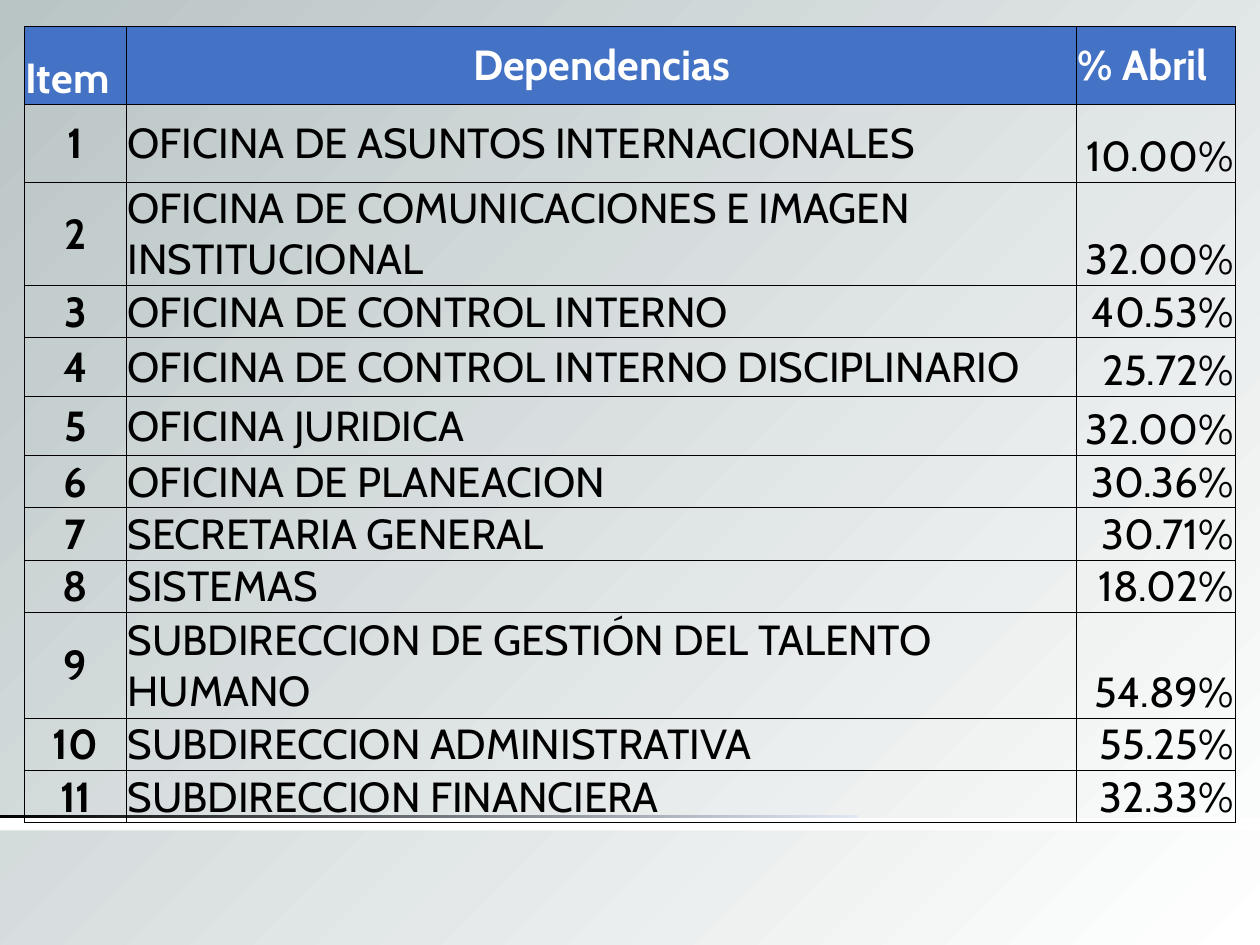
from lxml import etree
from pptx import Presentation
from pptx.dml.color import RGBColor
from pptx.enum.shapes import MSO_SHAPE
from pptx.enum.text import MSO_ANCHOR, PP_ALIGN
from pptx.oxml import parse_xml
from pptx.oxml.ns import nsdecls, qn
from pptx.util import Pt

LEFT, MID, RIGHT = PP_ALIGN.LEFT, PP_ALIGN.CENTER, PP_ALIGN.RIGHT
CENTER, LOW = MSO_ANCHOR.MIDDLE, MSO_ANCHOR.BOTTOM
RECT = MSO_SHAPE.RECTANGLE

HUES = {"head": "4472C4", "ink": "000000", "light": "FFFFFF",
        "mist": "B9C4C5", "pale": "E1E8F5"}
FONT, SIZE = "Cabin", 24

HEAD = ("Item", "Dependencias", "% Abril")
# office, share, row height
ROWS = [
    ("OFICINA DE ASUNTOS INTERNACIONALES", "10.00%", 44.5),
    ("OFICINA DE COMUNICACIONES E IMAGEN INSTITUCIONAL", "32.00%", 58.5),
    ("OFICINA DE CONTROL INTERNO", "40.53%", 29.5),
    ("OFICINA DE CONTROL INTERNO DISCIPLINARIO", "25.72%", 33.7),
    ("OFICINA JURIDICA", "32.00%", 33.7),
    ("OFICINA DE PLANEACION", "30.36%", 29.5),
    ("SECRETARIA GENERAL", "30.71%", 29.5),
    ("SISTEMAS", "18.02%", 29.5),
    ("SUBDIRECCION DE GESTIÓN DEL TALENTO HUMANO", "54.89%", 60.5),
    ("SUBDIRECCION ADMINISTRATIVA", "55.25%", 29.5),
    ("SUBDIRECCION FINANCIERA", "32.33%", 29.5),
]
HEIGHTS = [44.5] + [high for _, _, high in ROWS]
WIDTHS = (58.3, 542.8, 90.7)
# align, anchor, bold for each column
HEAD_LOOK = ((LEFT, LOW, True), (MID, CENTER, True), (LEFT, CENTER, True))
BODY_LOOK = ((MID, CENTER, True), (LEFT, CENTER, False), (RIGHT, LOW, False))


def tint(hue):
    return RGBColor.from_string(HUES[hue])


def blend(fill, first, last):
    fill.gradient()
    for stop, place, hue in zip(fill.gradient_stops, (0, 1), (first, last)):
        stop.position = place
        stop.color.rgb = tint(hue)


def add_bar(slide, top, wide, high):
    bar = slide.shapes.add_shape(RECT, 0, Pt(top), Pt(wide), Pt(high))
    bar.shadow.inherit = False
    bar.line.fill.background()
    return bar


def write(cell, text, align=LEFT, anchor=CENTER, bold=False, hue="ink"):
    cell.margin_left = cell.margin_right = cell.margin_top = Pt(0.7)
    cell.margin_bottom = 0
    cell.vertical_anchor = anchor
    para = cell.text_frame.paragraphs[0]
    para.alignment = align
    run = para.add_run()
    run.text = text
    font = run.font
    font.name, font.size, font.bold = FONT, Pt(SIZE), bold
    font.color.rgb = tint(hue)


def edge(cell):
    """Draw thin lines on all four sides; they must precede the cell fill."""
    props = cell._tc.get_or_add_tcPr()
    for spot, side in enumerate("LRTB"):
        props.insert(spot, parse_xml(
            f'<a:ln{side} {nsdecls("a")} w="{Pt(0.5)}"><a:solidFill>'
            f'<a:srgbClr val="{HUES["ink"]}"/></a:solidFill></a:ln{side}>'))


deck = Presentation()
deck.slide_width, deck.slide_height = Pt(720), Pt(540)
slide = deck.slides.add_slide(deck.slide_layouts[6])

# Backdrop: round gradient centred on the bottom right corner
back = slide.background.fill
blend(back, "light", "mist")
grad = slide._element.find(".//" + qn("a:gradFill"))
grad.remove(grad.find(qn("a:lin")))
ring = etree.SubElement(grad, qn("a:path"), path="circle")
etree.SubElement(ring, qn("a:fillToRect"), l="100000", t="100000")

rule = add_bar(slide, 466, 490.5, 3.5)
blend(rule.fill, "ink", "pale")
rule.fill.gradient_angle = 0
band = add_bar(slide, 467.5, 720, 7)
band.fill.solid()
band.fill.fore_color.rgb = tint("light")

lines = [HEAD] + [(str(num), name, share)
                  for num, (name, share, _) in enumerate(ROWS, 1)]
table = slide.shapes.add_table(len(lines), len(WIDTHS), Pt(14), Pt(15),
                               Pt(sum(WIDTHS)), Pt(sum(HEIGHTS))).table
table.first_row = table.horz_banding = False
for col, wide in zip(table.columns, WIDTHS):
    col.width = Pt(wide)
for row, high in zip(table.rows, HEIGHTS):
    row.height = Pt(high)

for r, line in enumerate(lines):
    looks = BODY_LOOK if r else HEAD_LOOK
    for c, (text, (align, anchor, bold)) in enumerate(zip(line, looks)):
        cell = table.cell(r, c)
        write(cell, text, align=align, anchor=anchor, bold=bold,
              hue="ink" if r else "light")
        if r:
            cell.fill.background()
        else:
            cell.fill.solid()
            cell.fill.fore_color.rgb = tint("head")
        edge(cell)

deck.save("out.pptx")
